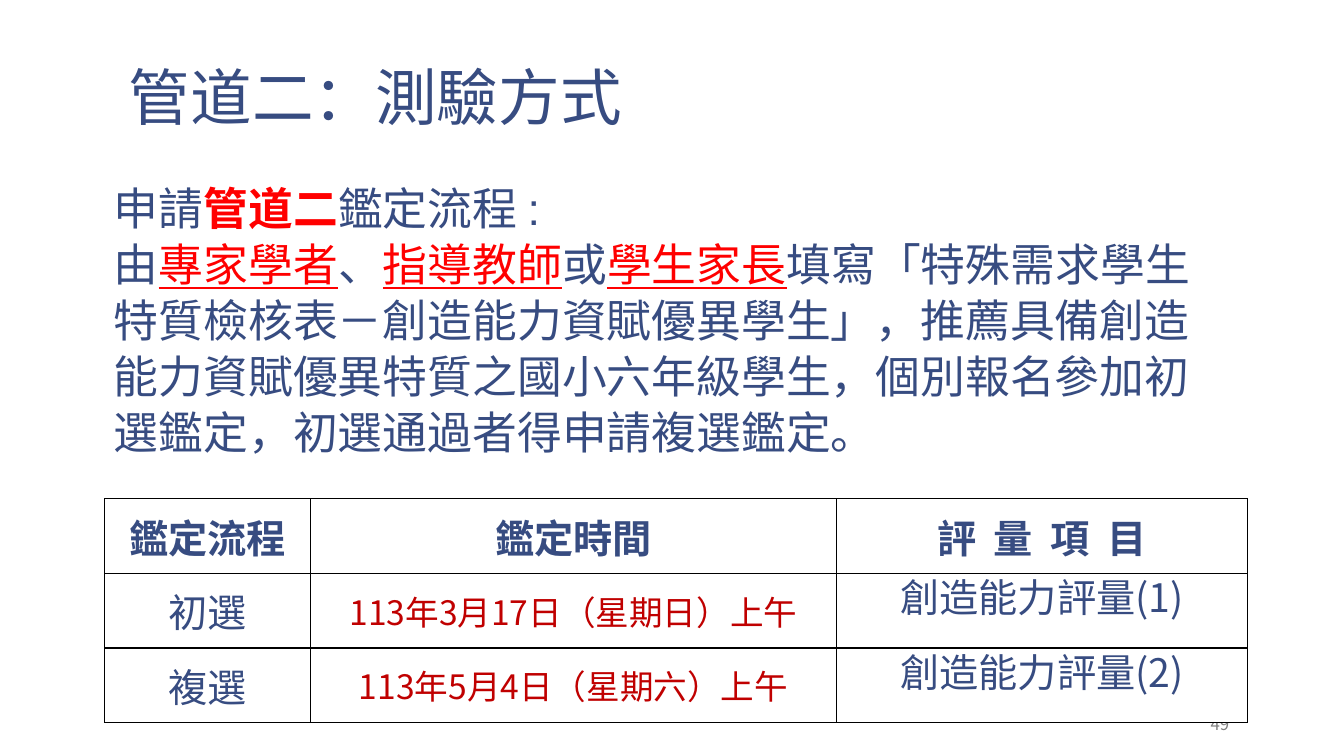
from pptx import Presentation
from pptx.dml.color import RGBColor
from pptx.enum.text import MSO_ANCHOR, MSO_AUTO_SIZE, PP_ALIGN
from pptx.oxml import parse_xml
from pptx.oxml.ns import nsdecls
from pptx.util import Cm, Pt

NAVY, RED, WINE, GRAY = "374C81", "FF0000", "C00000", "808080"
TC, SC = "Noto Sans CJK TC", "Noto Sans CJK SC"


def style(run, size, color, latin, east, bold=False):
    font = run.font
    font.size = Pt(size)
    font.bold = bold
    font.name = latin
    font.color.rgb = RGBColor.from_string(color)
    props = run._r.get_or_add_rPr()
    props.append(parse_xml(f'<a:ea {nsdecls("a")} typeface="{east}"/>'))


def place(shape, left, top, width, height, anchor):
    shape.left, shape.top = Cm(left), Cm(top)
    shape.width, shape.height = Cm(width), Cm(height)
    frame = shape.text_frame
    frame.word_wrap = True
    frame.auto_size = MSO_AUTO_SIZE.NONE
    frame.vertical_anchor = anchor
    frame.margin_left = frame.margin_right = Cm(0.33)
    frame.margin_top = frame.margin_bottom = Cm(0.18)
    return frame


deck = Presentation()
deck.slide_width, deck.slide_height = Cm(33.87), Cm(19.05)
slide = deck.slides.add_slide(deck.slide_layouts[1])

frame = place(slide.shapes.title, 2.92, 0.33, 28.22, 3.2, MSO_ANCHOR.BOTTOM)
frame.text = "管道二：測驗方式"
head = frame.paragraphs[0]
head.alignment = PP_ALIGN.LEFT
head.line_spacing = 0.85
style(head.runs[0], 44, NAVY, TC, TC)

box = slide.shapes.add_textbox(0, 0, 0, 0)
frame = place(box, 28.24, 17.78, 3.07, 0.89, MSO_ANCHOR.BOTTOM)
frame.text = "49"
frame.paragraphs[0].alignment = PP_ALIGN.RIGHT
style(frame.paragraphs[0].runs[0], 12, GRAY, TC, TC)

lines = [
    [("申請", ""), ("管道二", "bold"), ("鑑定流程 :", "")],
    [("由", ""), ("專家學者", "line"), ("、", ""), ("指導教師", "line"),
     ("或", ""), ("學生家長", "line"),
     ("填寫「特殊需求學生特質檢核表－創造能力資賦優異學生」，"
      "推薦具備創造能力資賦優異特質之國小六年級學生，"
      "個別報名參加初選鑑定，初選通過者得申請複選鑑定。", "")],
]
frame = place(slide.placeholders[1], 2.54, 4.32, 28.22, 7.59, MSO_ANCHOR.TOP)
frame.text = "\n".join("".join(text for text, mark in line) for line in lines)
for para, line in zip(frame.paragraphs, lines):
    para.text = ""
    props = para._p.get_or_add_pPr()
    props.set("marL", "0")
    props.set("indent", "0")
    props.append(parse_xml(f'<a:buNone {nsdecls("a")}/>'))
    para.line_spacing = Pt(40)
    para.space_before = Pt(0)
    for text, mark in line:
        run = para.add_run()
        run.text = text
        style(run, 32, RED if mark else NAVY, "Arial", TC, mark == "bold")
        run.font.underline = mark == "line"

rows = [
    ["鑑定流程", "鑑定時間", "評 量 項 目"],
    ["初選", "113年3月17日（星期日）上午", "創造能力評量(1)"],
    ["複選", "113年5月4日（星期六）上午", "創造能力評量(2)"],
]
wide = [5.18, 13.26, 10.36]
high = 1.88
grid = slide.shapes.add_table(
    len(rows), len(wide), Cm(2.64), Cm(12.57), Cm(sum(wide)), Cm(high * len(rows))
).table
grid.first_row = grid.horz_banding = False
for col, width in zip(grid.columns, wide):
    col.width = Cm(width)
for r, row in enumerate(rows):
    grid.rows[r].height = Cm(high)
    for c, text in enumerate(row):
        cell = grid.cell(r, c)
        cell.text = text
        cell.margin_left = cell.margin_right = Cm(0.18)
        cell.margin_top = cell.margin_bottom = 0
        cell.vertical_anchor = MSO_ANCHOR.MIDDLE
        cell.fill.solid()
        cell.fill.fore_color.rgb = RGBColor.from_string("FFFFFF")
        for i, side in enumerate("LRTB"):
            cell._tc.get_or_add_tcPr().insert(i, parse_xml(
                f'<a:ln{side} {nsdecls("a")} w="12700"><a:solidFill>'
                f'<a:srgbClr val="000000"/></a:solidFill></a:ln{side}>'))
        para = cell.text_frame.paragraphs[0]
        para.alignment = PP_ALIGN.CENTER
        run = para.runs[0]
        date = r > 0 and c == 1
        style(run, 24 if date else 28, WINE if date else NAVY, SC, SC, r == 0)
        if c == 2 and r == 0:
            run._r.get_or_add_rPr().set("spc", "315")
        elif c == 2:
            cell.vertical_anchor = MSO_ANCHOR.TOP
            para.line_spacing = Pt(36)

deck.save("out.pptx")
